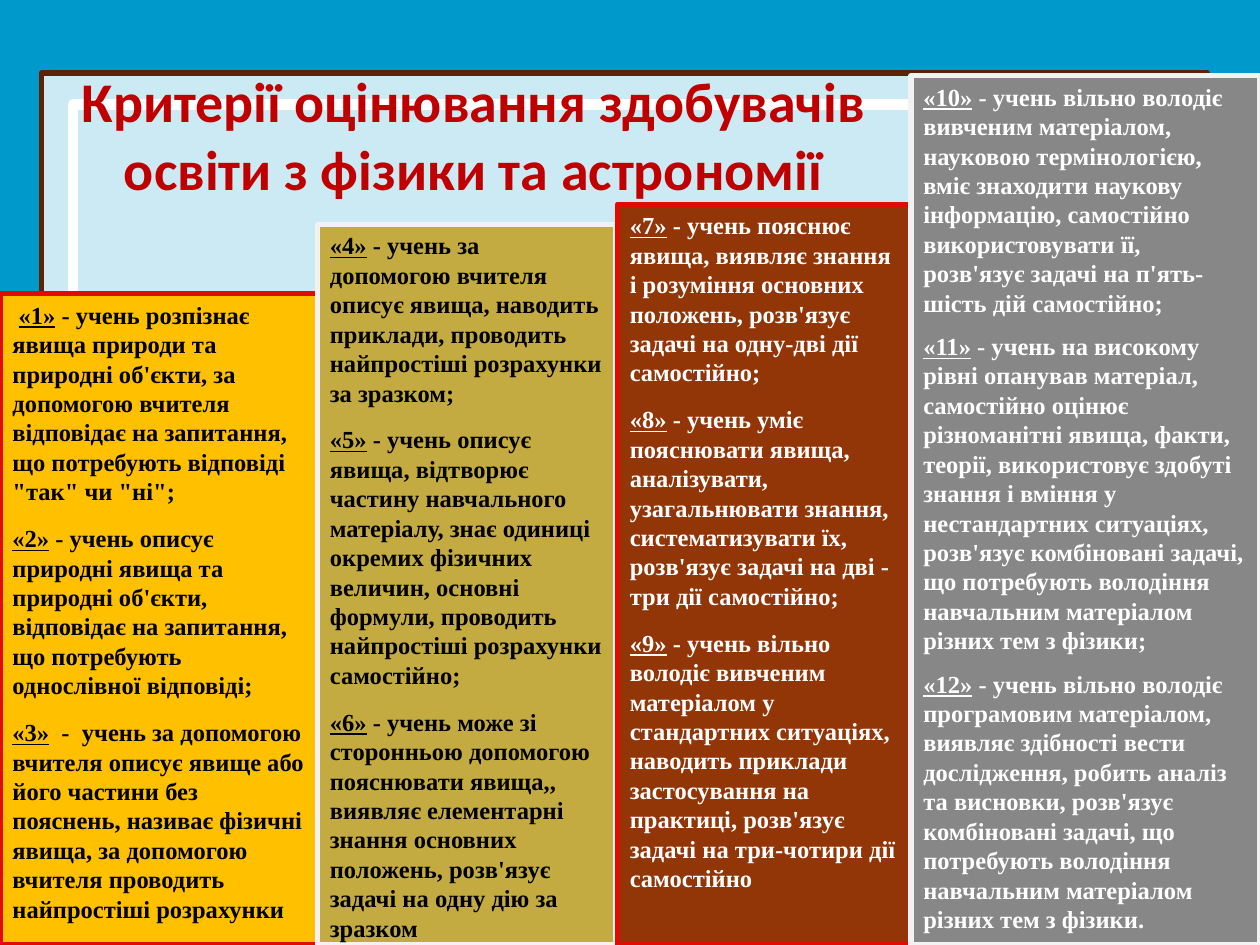
from dataclasses import dataclass

from lxml import etree
from pptx import Presentation
from pptx.dml.color import RGBColor
from pptx.enum.shapes import MSO_SHAPE
from pptx.enum.text import MSO_ANCHOR, MSO_AUTO_SIZE, PP_ALIGN
from pptx.oxml.ns import qn
from pptx.util import Inches, Pt

RECT = MSO_SHAPE.RECTANGLE
TOP, MIDDLE = MSO_ANCHOR.TOP, MSO_ANCHOR.MIDDLE
LEFT, CENTER = PP_ALIGN.LEFT, PP_ALIGN.CENTER
NO_FIT = MSO_AUTO_SIZE.NONE

WIDTH, HEIGHT = 10, 7.5
COLORS = {
    "back": "0099CC", "white": "FFFFFF", "black": "000000",
    "brown": "5C2305", "title": "C00000", "gold": "FFC000",
    "olive": "C3AA41", "rust": "923608", "gray": "878787",
    "red": "E10B00", "pale": "F2F2F2", "wine": "450600",
    "teal": "205867", "maroon": "490600", "moss": "4E6128",
}


@dataclass
class Grade:
    mark: str
    text: str
    lead: str = ""


@dataclass
class Column:
    left: float
    top: float
    width: float
    fill: str
    line: str
    shade: str
    ink: str
    after: int
    grades: list[Grade]


COLUMNS = [
    Column(0, 2.33, 2.52, "gold", "red", "wine", "black", 10, [
        Grade("«1»", " - учень розпізнає явища природи та природні об'єкти, "
              "за допомогою вчителя відповідає на запитання, що потребують "
              "відповіді \"так\" чи \"ні\";", lead=" "),
        Grade("«2»", " - учень описує природні явища та природні об'єкти, "
              "відповідає на запитання, що потребують однослівної відповіді;"),
        Grade("«3»", "  -  учень за допомогою вчителя описує явище або його "
              "частини без пояснень, називає фізичні явища, за допомогою "
              "вчителя проводить найпростіші розрахунки"),
    ]),
    Column(2.52, 1.78, 2.37, "olive", "pale", "teal", "black", 10, [
        Grade("«4»", " - учень за допомогою вчителя описує явища, наводить "
              "приклади, проводить найпростіші розрахунки за зразком;"),
        Grade("«5»", " - учень описує явища, відтворює частину навчального "
              "матеріалу, знає одиниці окремих фізичних величин, основні "
              "формули, проводить найпростіші розрахунки самостійно;"),
        Grade("«6»", " - учень може зі сторонньою допомогою пояснювати "
              "явища,, виявляє елементарні знання основних положень, "
              "розв'язує задачі на одну дію за зразком"),
    ]),
    Column(4.9, 1.62, 2.35, "rust", "red", "maroon", "white", 10, [
        Grade("«7»", " - учень пояснює явища, виявляє знання і розуміння "
              "основних положень, розв'язує задачі на одну-дві дії "
              "самостійно;"),
        Grade("«8»", " - учень уміє пояснювати явища, аналізувати, "
              "узагальнювати знання, систематизувати їх, розв'язує задачі "
              "на дві - три дії самостійно;"),
        Grade("«9»", " - учень вільно володіє вивченим матеріалом у "
              "стандартних ситуаціях, наводить приклади застосування на "
              "практиці, розв'язує задачі на три-чотири дії самостійно"),
    ]),
    Column(7.23, 0.6, 2.77, "gray", "pale", "moss", "white", 8, [
        Grade("«10»", " - учень вільно володіє вивченим матеріалом, науковою "
              "термінологією, вміє знаходити наукову інформацію, самостійно "
              "використовувати її, розв'язує задачі на п'ять-шість дій "
              "самостійно;"),
        Grade("«11»", " - учень на високому рівні опанував матеріал, "
              "самостійно оцінює різноманітні явища, факти, теорії, "
              "використовує здобуті знання і вміння у нестандартних "
              "ситуаціях, розв'язує комбіновані задачі, що потребують "
              "володіння навчальним матеріалом різних тем з фізики;"),
        Grade("«12»", " - учень вільно володіє програмовим матеріалом, "
              "виявляє здібності вести дослідження, робить аналіз та "
              "висновки, розв'язує комбіновані задачі, що потребують "
              "володіння навчальним матеріалом різних тем з фізики."),
    ]),
]


def color(name: str) -> RGBColor:
    return RGBColor.from_string(COLORS[name])


def add_box(slide, left, top, width, height, fill, line, weight):
    """Add a rectangle; a fill of None leaves it open."""
    box = slide.shapes.add_shape(RECT, Inches(left), Inches(top),
                                 Inches(width), Inches(height))
    box.shadow.inherit = False
    if fill:
        box.fill.solid()
        box.fill.fore_color.rgb = color(fill)
    else:
        box.fill.background()
    box.line.color.rgb = color(line)
    box.line.width = Pt(weight)
    return box


def set_alpha(parent, percent: int) -> None:
    tint = parent.find(".//" + qn("a:srgbClr"))
    etree.SubElement(tint, qn("a:alpha"), val=str(percent * 1000))


def add_shade(box, name: str) -> None:
    """Give the box a hard, half-clear shadow to its lower right."""
    effects = box.element.spPr.find(qn("a:effectLst"))
    shade = etree.SubElement(effects, qn("a:outerShdw"), blurRad="0",
                             dist=str(Pt(2.2)), dir=str(63 * 60000),
                             algn="ctr", rotWithShape="0")
    etree.SubElement(shade, qn("a:srgbClr"), val=COLORS[name])
    set_alpha(shade, 50)


def add_frames(slide) -> None:
    outer = add_box(slide, 0.33, 0.58, 9.25, 6.33, "white", "brown", 3)
    set_alpha(outer.element.spPr.find(qn("a:solidFill")), 80)
    add_box(slide, 0.58, 0.83, 8.75, 5.83, None, "white", 6)


def set_title(slide) -> None:
    title = slide.shapes.title
    title.left, title.top = Inches(0.27), Inches(0.6)
    title.width, title.height = Inches(6.98), Inches(0.93)
    frame = title.text_frame
    frame.text = "Критерії оцінювання здобувачів освіти з фізики та астрономії"
    frame.auto_size = NO_FIT
    frame.word_wrap = True
    frame.vertical_anchor = MIDDLE
    para = frame.paragraphs[0]
    para.alignment = CENTER
    font = para.runs[0].font
    font.name, font.size, font.bold = "Calibri", Pt(32), True
    font.color.rgb = color("title")
    # bring the title in front of the frames
    title.element.getparent().append(title.element)


def add_run(para, text: str, ink: str, under: bool = False) -> None:
    run = para.add_run()
    run.text = text
    font = run.font
    font.name, font.size, font.bold = "Times New Roman", Pt(14), True
    font.underline = under
    font.color.rgb = color(ink)


def add_column(slide, col: Column) -> None:
    box = add_box(slide, col.left, col.top, col.width, HEIGHT - col.top,
                  col.fill, col.line, 3)
    add_shade(box, col.shade)
    frame = box.text_frame
    frame.word_wrap = True
    frame.vertical_anchor = TOP
    for i, grade in enumerate(col.grades):
        para = frame.add_paragraph() if i else frame.paragraphs[0]
        para.alignment = LEFT
        para.space_after = Pt(col.after)
        para.line_spacing = Pt(16.8)
        if grade.lead:
            add_run(para, grade.lead, col.ink)
        add_run(para, grade.mark, col.ink, under=True)
        add_run(para, grade.text, col.ink)


def main() -> None:
    deck = Presentation()
    deck.slide_width, deck.slide_height = Inches(WIDTH), Inches(HEIGHT)
    slide = deck.slides.add_slide(deck.slide_layouts[5])
    slide.background.fill.solid()
    slide.background.fill.fore_color.rgb = color("back")
    add_frames(slide)
    set_title(slide)
    for col in COLUMNS:
        add_column(slide, col)
    deck.save("out.pptx")


if __name__ == "__main__":
    main()
